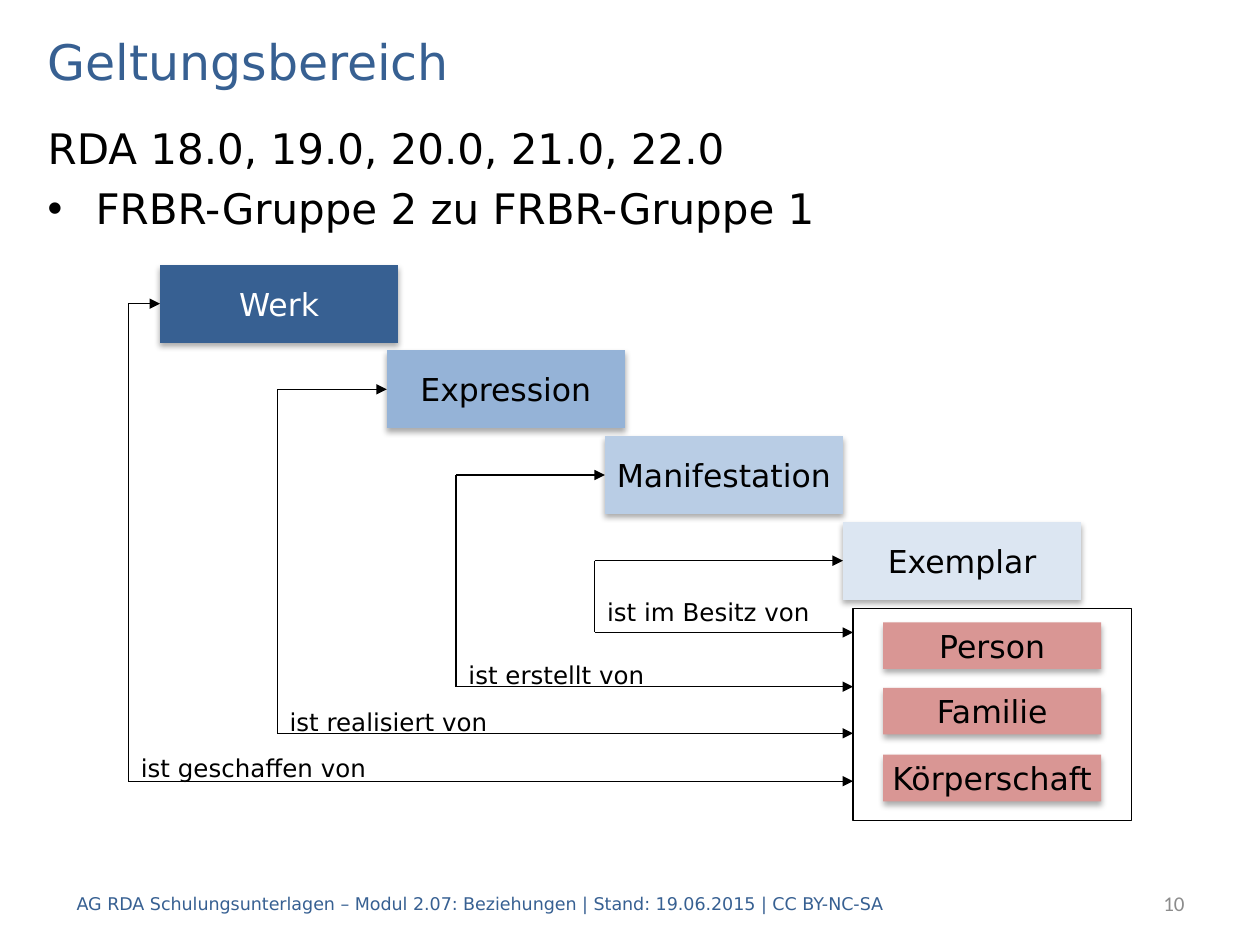
from lxml import etree
from pptx import Presentation
from pptx.dml.color import RGBColor
from pptx.enum.shapes import MSO_CONNECTOR, MSO_SHAPE
from pptx.enum.text import MSO_ANCHOR, PP_ALIGN
from pptx.oxml.ns import qn
from pptx.util import Inches, Pt

LEFT, CENTER, RIGHT = PP_ALIGN.LEFT, PP_ALIGN.CENTER, PP_ALIGN.RIGHT
TOP, MIDDLE = MSO_ANCHOR.TOP, MSO_ANCHOR.MIDDLE
RECTANGLE, PROCESS = MSO_SHAPE.RECTANGLE, MSO_SHAPE.FLOWCHART_PROCESS
STRAIGHT = MSO_CONNECTOR.STRAIGHT

FONT = "DejaVu Sans"
BLUE, BLACK, WHITE, GREY, RED = "376092", "000000", "FFFFFF", "8C8C8C", "D99694"
LEVEL_WIDTH, LEVEL_HEIGHT = 1.89, 0.62
AGENT_WIDTH, AGENT_HEIGHT = 1.73, 0.37
AGENTS_LEFT = 6.77

LEVELS = [
    {"name": "Werk", "left": 1.27, "fill": BLUE, "color": WHITE,
     "relation": "ist geschaffen von", "trunk": 1.02, "bottom": 6.2, "label": (5.93, 4.02)},
    {"name": "Expression", "left": 3.07, "fill": "95B3D7", "color": BLACK,
     "relation": "ist realisiert von", "trunk": 2.2, "bottom": 5.82, "label": (5.56, 4.02)},
    {"name": "Manifestation", "left": 4.8, "fill": "B9CDE5", "color": BLACK,
     "relation": "ist erstellt von", "trunk": 3.62, "bottom": 5.45, "label": (5.19, 1.97)},
    {"name": "Exemplar", "left": 6.69, "fill": "DCE6F2", "color": BLACK,
     "relation": "ist im Besitz von", "trunk": 4.72, "bottom": 5.02, "label": (4.69, 1.97)},
]


def rgb(value):
    return RGBColor.from_string(value)


def write_text(frame, text, size=18, color=BLACK, font=FONT, align=LEFT,
               anchor=TOP, wrap=True, space_before=0):
    frame.word_wrap = wrap
    frame.vertical_anchor = anchor
    for index, line in enumerate(text.split("\n")):
        paragraph = frame.paragraphs[0] if index == 0 else frame.add_paragraph()
        paragraph.alignment = align
        paragraph.space_before = Pt(space_before if index else 0)
        run = paragraph.add_run()
        run.text = line
        run.font.size = Pt(size)
        run.font.name = font
        run.font.color.rgb = rgb(color)


def add_text(slide, left, top, width, height, text, **style):
    box = slide.shapes.add_textbox(Inches(left), Inches(top), Inches(width), Inches(height))
    write_text(box.text_frame, text, **style)
    return box


def add_shadow(shape):
    effects = shape._element.spPr.find(qn("a:effectLst"))
    shadow = etree.SubElement(effects, qn("a:outerShdw"), blurRad=str(Pt(3.5)),
                              dist=str(Pt(2.2)), dir="5400000", rotWithShape="0")
    color = etree.SubElement(shadow, qn("a:srgbClr"), val=BLACK)
    etree.SubElement(color, qn("a:alpha"), val="32000")


def add_box(slide, kind, left, top, width, height):
    shape = slide.shapes.add_shape(kind, Inches(left), Inches(top), Inches(width), Inches(height))
    shape.shadow.inherit = False
    return shape


def add_entity(slide, kind, left, top, width, height, text, fill, color=BLACK):
    shape = add_box(slide, kind, left, top, width, height)
    shape.fill.solid()
    shape.fill.fore_color.rgb = rgb(fill)
    shape.line.fill.background()
    add_shadow(shape)
    write_text(shape.text_frame, text, color=color, align=CENTER, anchor=MIDDLE, wrap=False)


def add_line(slide, start_x, start_y, end_x, end_y, arrow=False):
    line = slide.shapes.add_connector(STRAIGHT, Inches(start_x), Inches(start_y),
                                      Inches(end_x), Inches(end_y))
    line.line.color.rgb = rgb(BLACK)
    line.line.width = Pt(0.75)
    if arrow:
        etree.SubElement(line.line._get_or_add_ln(), qn("a:tailEnd"), type="triangle")
    etree.SubElement(line._element.spPr, qn("a:effectLst"))


def add_heading(slide, left, top, width):
    add_text(slide, left, top, width, 0.56, "Geltungsbereich",
             size=28, color=BLUE, anchor=MIDDLE)
    body = add_text(slide, left, top + 0.72, width, 5.98,
                    "RDA 18.0, 19.0, 20.0, 21.0, 22.0\nFRBR-Gruppe 2 zu FRBR-Gruppe 1",
                    size=24, space_before=5.6)
    for paragraph, bullet in zip(body.text_frame.paragraphs, (None, "•")):
        properties = paragraph._p.get_or_add_pPr()
        properties.set("marL", str(Inches(0.38)))
        properties.set("indent", str(-Inches(0.38)))
        if bullet:
            etree.SubElement(properties, qn("a:buFont"), typeface="Arial")
            etree.SubElement(properties, qn("a:buChar"), char=bullet)


def add_agents(slide, left, top, width, height):
    frame = add_box(slide, RECTANGLE, left, top, width, height)
    frame.fill.background()
    frame.line.color.rgb = rgb(BLACK)
    frame.line.width = Pt(0.75)
    for name, offset in (("Person", 0.11), ("Familie", 0.63), ("Körperschaft", 1.16)):
        add_entity(slide, RECTANGLE, left + 0.24, top + offset,
                   AGENT_WIDTH, AGENT_HEIGHT, name, RED)


def add_level(slide, level, top):
    trunk, bottom = level["trunk"], level["bottom"]
    middle = top + LEVEL_HEIGHT / 2
    add_line(slide, trunk, middle, level["left"], middle, arrow=True)
    add_line(slide, trunk, middle, trunk, bottom)
    add_line(slide, trunk, bottom, AGENTS_LEFT, bottom, arrow=True)
    label_top, label_width = level["label"]
    add_text(slide, trunk, label_top, label_width, 0.26, level["relation"], size=14)
    add_entity(slide, PROCESS, level["left"], top, LEVEL_WIDTH, LEVEL_HEIGHT,
               level["name"], level["fill"], level["color"])


def add_diagram(slide, top, step):
    add_agents(slide, AGENTS_LEFT, top + 2.73, 2.21, 1.68)
    for index, level in enumerate(LEVELS):
        add_level(slide, level, top + index * step)


def add_footer(slide, left, top, height):
    add_text(slide, left, top, 8.43, height,
             "AG RDA Schulungsunterlagen – Modul 2.07: Beziehungen | "
             "Stand: 19.06.2015 | CC BY-NC-SA",
             size=10, color=BLUE, anchor=MIDDLE)
    add_text(slide, left + 7.4, top, 1.59, height, "10", size=12, color=GREY,
             font="Calibri", align=RIGHT, anchor=MIDDLE)


def main():
    presentation = Presentation()
    presentation.slide_width, presentation.slide_height = Inches(10), Inches(7.5)
    slide = presentation.slides.add_slide(presentation.slide_layouts[6])
    add_heading(slide, 0.28, 0.2, 9.45)
    add_footer(slide, 0.51, 6.97, 0.4)
    add_diagram(slide, 2.1, 0.68)
    presentation.save("out.pptx")


if __name__ == "__main__":
    main()
